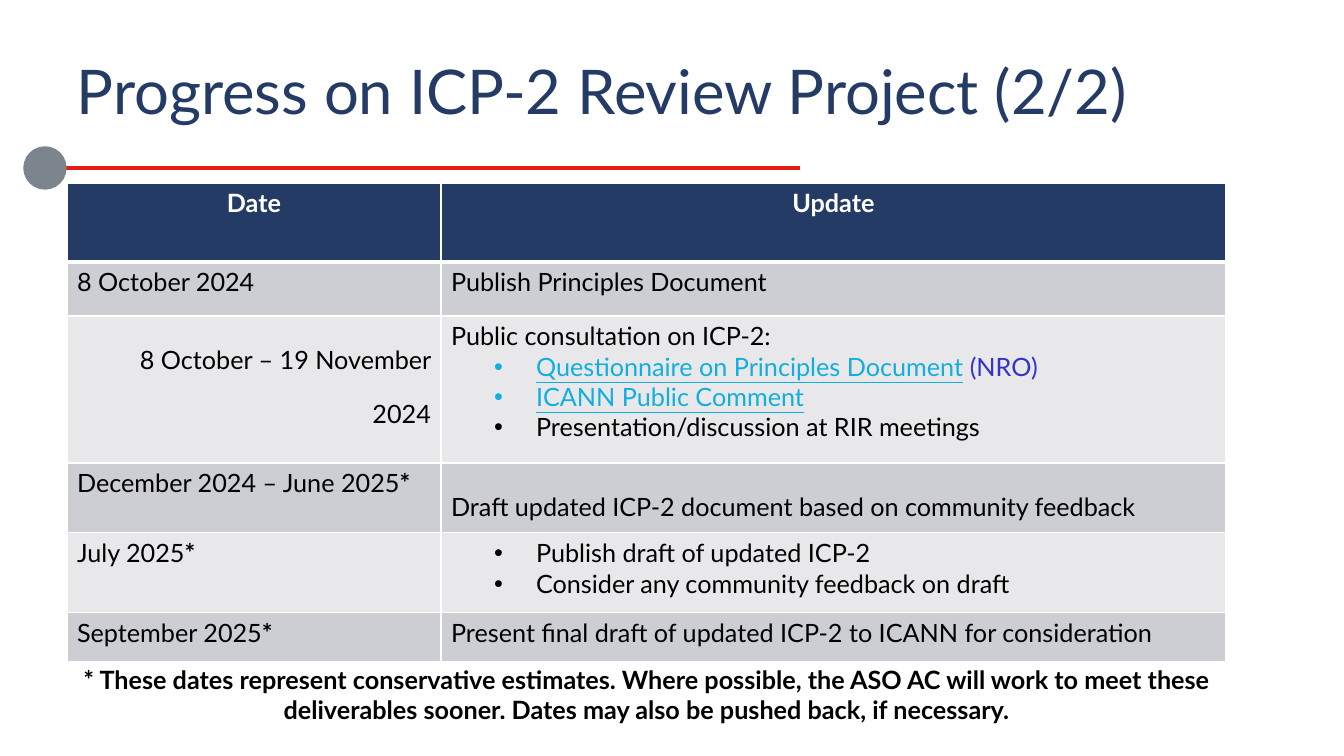
from dataclasses import dataclass
from typing import Any, Optional

from lxml.etree import SubElement
from pptx import Presentation
from pptx.dml.color import RGBColor
from pptx.enum.shapes import MSO_CONNECTOR as Connector, MSO_SHAPE as Shape
from pptx.enum.text import MSO_ANCHOR as Anchor, PP_ALIGN as Align
from pptx.oxml import parse_xml
from pptx.oxml.ns import nsdecls, qn
from pptx.util import Emu, Pt

EMU_PER_PX = 914400 / 100.8


@dataclass(frozen=True)
class Theme:
    font: str = "Lato"
    navy: str = "243B65"
    red: str = "E41C11"
    gray: str = "7C848D"
    black: str = "000000"
    white: str = "FFFFFF"
    link: str = "12AEDF"
    violet: str = "3333CC"
    bands: tuple[str, str] = ("CDCED3", "E8E8EA")
    title_size: int = 44
    body_size: int = 18


THEME = Theme()


@dataclass(frozen=True)
class Span:
    text: str
    color: str = THEME.black
    bold: bool = False
    underline: bool = False
    size: int = THEME.body_size


@dataclass(frozen=True)
class Para:
    spans: tuple[Span, ...]
    align: Align = Align.LEFT
    spacing: Optional[float] = None
    bullet: bool = False


@dataclass(frozen=True)
class Row:
    height: int
    date: Para
    update: tuple[Para, ...]


def px(length: int) -> Emu:
    return Emu(round(length * EMU_PER_PX))


def rgb(color: str) -> RGBColor:
    return RGBColor.from_string(color)


def apply(target: Any, values: dict[str, Any]) -> None:
    for name, value in values.items():
        setattr(target, name, value)


def plain(text: str) -> Para:
    return Para((Span(text),))


def item(*spans: Span) -> Para:
    return Para(spans, bullet=True)


def header(text: str) -> Para:
    return Para((Span(text, THEME.white, bold=True),), Align.CENTER)


def estimate(text: str) -> Para:
    """A date marked with the bold footnote star."""
    return Para((Span(text), Span("*", bold=True)))


LOOSE = 38.4
COLUMNS = (374, 785)
ROWS = (
    Row(79, header("Date"), (header("Update"),)),
    Row(54, plain("8 October 2024"), (plain("Publish Principles Document"),)),
    Row(147, Para((Span("8 October – 19 November 2024"),), Align.RIGHT, LOOSE), (
        plain("Public consultation on ICP-2:"),
        item(Span("Questionnaire on Principles Document", THEME.link, underline=True),
             Span(" (NRO)", THEME.violet)),
        item(Span("ICANN Public Comment", THEME.link, underline=True)),
        item(Span("Presentation/discussion at RIR meetings")),
    )),
    Row(70, estimate("December 2024 – June 2025"), (
        Para((Span("Draft updated ICP-2 document based on community feedback"),),
             spacing=LOOSE),
    )),
    Row(80, estimate("July 2025"), (
        item(Span("Publish draft of updated ICP-2")),
        item(Span("Consider any community feedback on draft")),
    )),
    Row(49, estimate("September 2025"), (
        plain("Present final draft of updated ICP-2 to ICANN for consideration"),
    )),
)
TITLE = Para((Span("Progress on ICP-2 Review Project (2/2)", THEME.navy,
                   size=THEME.title_size),), spacing=0.9)
FOOTNOTE = Para((Span(
    "* These dates represent conservative estimates. Where possible, the ASO AC will "
    "work to meet these deliverables sooner. Dates may also be pushed back, if necessary.",
    bold=True),), Align.CENTER)


def write(frame: Any, paras: tuple[Para, ...]) -> None:
    for index, para in enumerate(paras):
        paragraph = frame.add_paragraph() if index else frame.paragraphs[0]
        paragraph.alignment = para.align
        if para.spacing:
            paragraph.line_spacing = para.spacing if para.spacing < 5 else Pt(para.spacing)
        if para.bullet:
            paragraph.level = 1
            properties = paragraph._p.get_or_add_pPr()
            properties.set("marL", str(px(85)))
            properties.set("indent", str(-px(42)))
            SubElement(properties, qn("a:buFont"), typeface="Arial")
            SubElement(properties, qn("a:buChar"), char="•")
        for span in para.spans:
            run = paragraph.add_run()
            run.text = span.text
            apply(run.font, {"name": THEME.font, "size": Pt(span.size),
                             "bold": span.bold, "underline": span.underline})
            run.font.color.rgb = rgb(span.color)


def add_text(page: Any, left: int, top: int, width: int, height: int,
             para: Para, anchor: Anchor = Anchor.TOP) -> None:
    box = page.shapes.add_textbox(px(left), px(top), px(width), px(height))
    apply(box.text_frame, {"word_wrap": True, "vertical_anchor": anchor})
    write(box.text_frame, (para,))


def set_borders(cell: Any, top: int, bottom: int) -> None:
    properties = cell._tc.get_or_add_tcPr()
    widths = {"lnL": 1, "lnR": 1, "lnT": top, "lnB": bottom}
    for index, (tag, width) in enumerate(widths.items()):
        properties.insert(index, parse_xml(
            f'<a:{tag} {nsdecls("a")} w="{Pt(width)}"><a:solidFill>'
            f'<a:srgbClr val="{THEME.white}"/></a:solidFill></a:{tag}>'))


def add_schedule(page: Any, left: int, top: int) -> None:
    height = sum(row.height for row in ROWS)
    table = page.shapes.add_table(len(ROWS), len(COLUMNS), px(left), px(top),
                                  px(sum(COLUMNS)), px(height)).table
    for column, width in zip(table.columns, COLUMNS):
        column.width = px(width)
    for index, row in enumerate(ROWS):
        table.rows[index].height = px(row.height)
        fill = THEME.bands[(index - 1) % 2] if index else THEME.navy
        for cell, paras in zip(table.rows[index].cells, ((row.date,), row.update)):
            cell.fill.solid()
            cell.fill.fore_color.rgb = rgb(fill)
            set_borders(cell, top=3 if index == 1 else 1, bottom=1 if index else 3)
            write(cell.text_frame, paras)


def add_rule(page: Any) -> None:
    """The red line under the title with its round gray end."""
    line = page.shapes.add_connector(Connector.STRAIGHT, px(27), px(168), px(800), px(168))
    line.line.color.rgb = rgb(THEME.red)
    line.line.width = Pt(3)
    SubElement(line._element.spPr, qn("a:effectLst"))
    dot = page.shapes.add_shape(Shape.OVAL, px(24), px(147), px(42), px(42))
    dot.shadow.inherit = False
    dot.fill.solid()
    dot.fill.fore_color.rgb = rgb(THEME.gray)
    dot.line.color.rgb = rgb(THEME.gray)
    dot.line.width = Pt(1)


def main() -> None:
    deck = Presentation()
    apply(deck, {"slide_width": px(1344), "slide_height": px(756)})
    page = deck.slides.add_slide(deck.slide_layouts[6])
    add_rule(page)
    add_text(page, 67, 22, 1224, 146, TITLE, Anchor.MIDDLE)
    add_schedule(page, 67, 183)
    add_text(page, 67, 659, 1159, 72, FOOTNOTE)
    deck.save("out.pptx")


if __name__ == "__main__":
    main()
